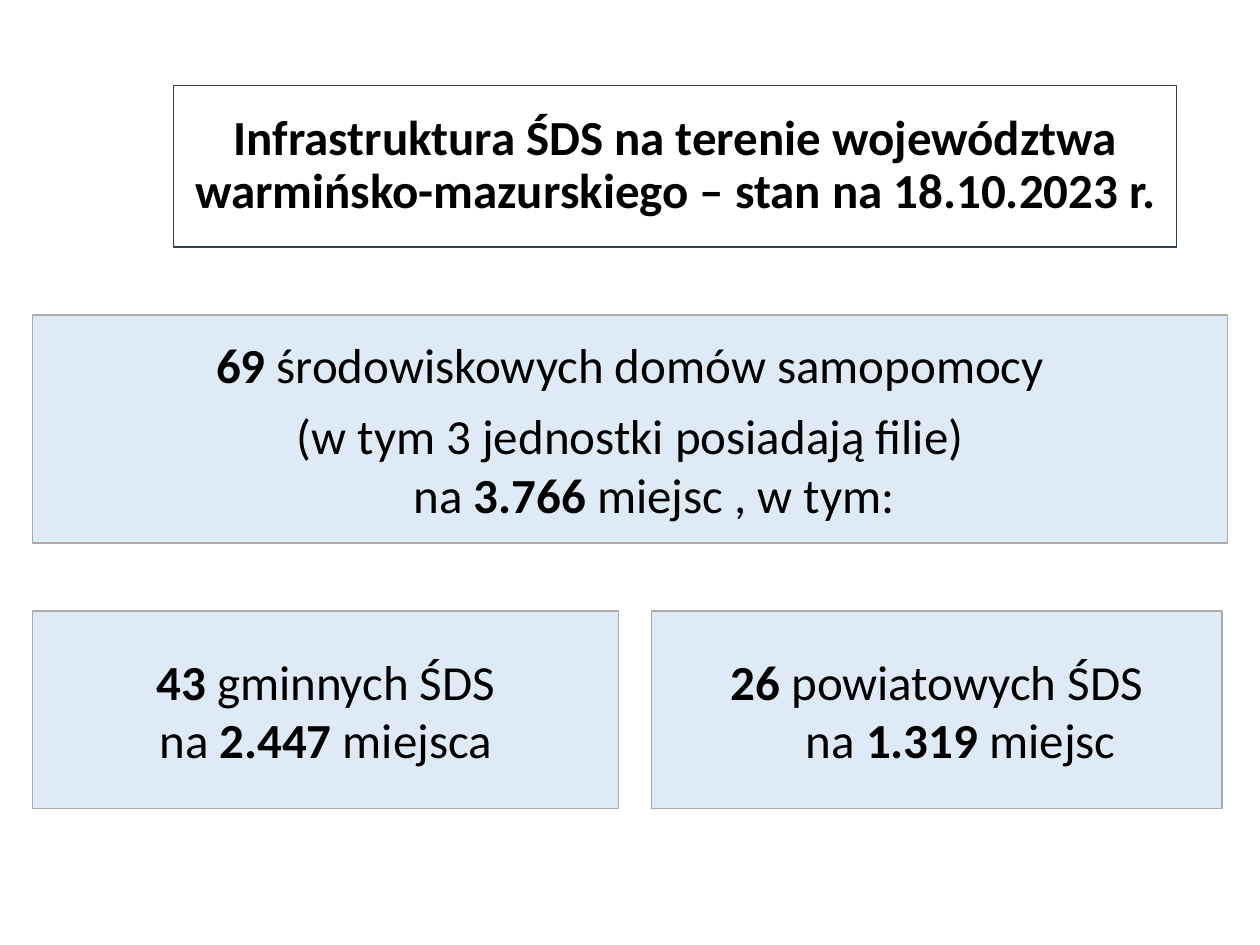
from pptx import Presentation
from pptx.dml.color import RGBColor
from pptx.enum.shapes import MSO_SHAPE
from pptx.enum.text import MSO_ANCHOR, PP_ALIGN
from pptx.util import Inches, Pt

PALE_BLUE, GREY, SLATE, BLACK = "DEEBF7", "AFABAB", "333F50", "000000"
LEFT, COUNTS_TOP, COUNTS_HEIGHT = 0.26, 4.85, 1.57
HANGING = 0.38


def color(hex_value):
    return RGBColor.from_string(hex_value)


def add_box(slide, left, top, width, height, line, fill=None):
    """Add an outlined rectangle and return its text frame."""
    box = slide.shapes.add_shape(MSO_SHAPE.RECTANGLE, Inches(left), Inches(top),
                                 Inches(width), Inches(height))
    box.shadow.inherit = False
    if fill:
        box.fill.solid()
        box.fill.fore_color.rgb = color(fill)
    else:
        box.fill.background()
    box.line.color.rgb = color(line)
    box.line.width = Pt(0.75)
    frame = box.text_frame
    frame.word_wrap = True
    frame.vertical_anchor = MSO_ANCHOR.MIDDLE
    return frame


def write_paragraph(paragraph, lines, hanging=False):
    """Write lines of (text, bold) runs, parted by line breaks."""
    paragraph.alignment = PP_ALIGN.CENTER
    font = paragraph.font
    font.name, font.size = "Calibri", Pt(28)
    font.color.rgb = color(BLACK)
    if hanging:
        paragraph.space_before = Pt(6.7)
        properties = paragraph._p.get_or_add_pPr()
        properties.set("marL", str(Inches(HANGING)))
        properties.set("indent", str(-Inches(HANGING)))
    for number, line in enumerate(lines):
        if number:
            paragraph.add_line_break()
        for text, bold in line:
            run = paragraph.add_run()
            run.text = text
            run.font.bold = bold


def main():
    prs = Presentation()
    prs.slide_width, prs.slide_height = Inches(10), Inches(7.5)
    slide = prs.slides.add_slide(prs.slide_layouts[6])

    # Title
    title = add_box(slide, 1.38, 0.68, 7.96, 1.28, SLATE).paragraphs[0]
    write_paragraph(title, [[("Infrastruktura ŚDS na terenie województwa "
                              "warmińsko-mazurskiego – stan na 18.10.2023 r.", True)]])
    title.line_spacing = 0.9

    # Total number of homes and places
    total = add_box(slide, LEFT, 2.5, 9.48, 1.81, GREY, PALE_BLUE)
    write_paragraph(total.paragraphs[0],
                    [[("69 ", True), ("środowiskowych domów samopomocy", False)]],
                    hanging=True)
    write_paragraph(total.add_paragraph(),
                    [[("(w tym 3 jednostki posiadają filie)", False)],
                     [("na ", False), ("3.766 ", True), ("miejsc , w tym:", False)]],
                    hanging=True)

    # Municipal and county homes
    counts = [
        (LEFT, 4.65, "43", "gminnych", "2.447", "miejsca", False),
        (5.17, 4.53, "26", "powiatowych", "1.319", "miejsc", True),
    ]
    for left, width, homes, level, places, unit, hanging in counts:
        frame = add_box(slide, left, COUNTS_TOP, width, COUNTS_HEIGHT, GREY, PALE_BLUE)
        write_paragraph(frame.paragraphs[0],
                        [[(homes, True), (f" {level} ŚDS", False)],
                         [("na ", False), (places, True), (f" {unit}", False)]],
                        hanging)

    prs.save("out.pptx")


if __name__ == "__main__":
    main()
